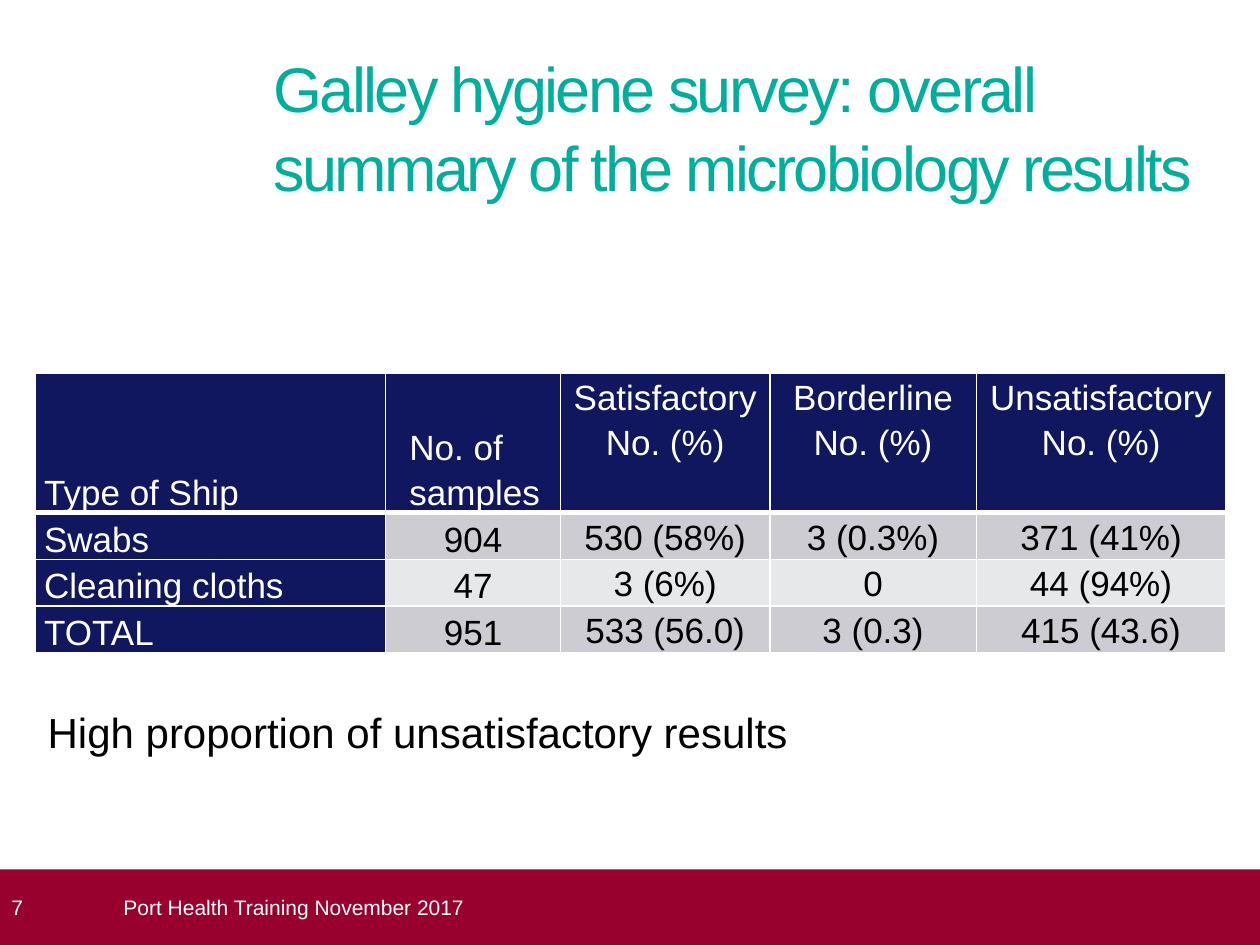
from dataclasses import dataclass

from lxml.etree import SubElement
from pptx import Presentation
from pptx.dml.color import RGBColor
from pptx.enum.shapes import MSO_SHAPE
from pptx.enum.text import MSO_ANCHOR, PP_ALIGN
from pptx.oxml.ns import qn
from pptx.util import Inches, Pt

TEAL = RGBColor(0x00, 0xAE, 0x9E)
NAVY = RGBColor(0x11, 0x17, 0x5E)
DARK = RGBColor(0xCC, 0xCC, 0xD2)
PALE = RGBColor(0xE7, 0xE8, 0xEA)
RED = RGBColor(0x98, 0x00, 0x2E)
WHITE = RGBColor(0xFF, 0xFF, 0xFF)
BLACK = RGBColor(0x00, 0x00, 0x00)

COLS = [2.78, 1.39, 1.66, 1.64, 1.98]
ROWS = [1.11, 0.37, 0.37, 0.37]
DATA = [
    ["Type of Ship", "No. of samples", "Satisfactory\nNo. (%)",
     "Borderline\nNo. (%)", "Unsatisfactory\nNo. (%)"],
    ["Swabs", "904", "530 (58%)", "3 (0.3%)", "371 (41%)"],
    ["Cleaning cloths", "47", "3 (6%)", "0", "44 (94%)"],
    ["TOTAL", "951", "533 (56.0)", "3 (0.3)", "415 (43.6)"],
]


@dataclass
class Label:
    text: str
    box: tuple
    size: int
    color: RGBColor
    inset: tuple
    anchor: MSO_ANCHOR


def place(shape, box: tuple) -> None:
    shape.left, shape.top, shape.width, shape.height = map(Inches, box)


def add_run(para, text: str, size: int, color: RGBColor):
    run = para.add_run()
    run.text = text
    run.font.name = "Arial"
    run.font.size = Pt(size)
    run.font.color.rgb = color
    return run


def set_inset(item, inset: tuple) -> None:
    (item.margin_left, item.margin_top,
     item.margin_right, item.margin_bottom) = map(Inches, inset)


def fill_label(shape, label: Label):
    place(shape, label.box)
    frame = shape.text_frame
    frame.word_wrap = True
    frame.vertical_anchor = label.anchor
    set_inset(frame, label.inset)
    para = frame.paragraphs[0]
    para.alignment = PP_ALIGN.LEFT
    return add_run(para, label.text, label.size, label.color)


def add_edges(cell, base: float) -> None:
    """White cell borders; they must come before the fill."""
    props = cell._tc.get_or_add_tcPr()
    for side, width in (("L", 1), ("R", 1), ("T", 1), ("B", base)):
        line = SubElement(props, qn(f"a:ln{side}"), w=str(Pt(width)))
        fill = SubElement(line, qn("a:solidFill"))
        SubElement(fill, qn("a:srgbClr"), val=str(WHITE))


def fill_cell(cell, row: int, col: int) -> None:
    head = row == 0 or col == 0
    add_edges(cell, 3 if row == 0 else 1)
    cell.fill.solid()
    cell.fill.fore_color.rgb = NAVY if head else (DARK if row % 2 else PALE)
    set_inset(cell, (0.07, 0, 0.07, 0))
    cell.vertical_anchor = MSO_ANCHOR.BOTTOM if col < 2 else MSO_ANCHOR.TOP
    left = col == 0 or (row == 0 and col == 1)
    for num, text in enumerate(DATA[row][col].split("\n")):
        frame = cell.text_frame
        para = frame.add_paragraph() if num else frame.paragraphs[0]
        para.alignment = PP_ALIGN.LEFT if left else PP_ALIGN.CENTER
        para.line_spacing = 1.15
        if row == 0 and col == 1:
            para._p.get_or_add_pPr().set("marL", str(Inches(0.12)))
        add_run(para, text, 20, WHITE if head else BLACK)


def add_grid(slide) -> None:
    grid = slide.shapes.add_table(
        len(ROWS), len(COLS), Inches(0.28), Inches(2.96),
        Inches(sum(COLS)), Inches(sum(ROWS))).table
    for col, width in enumerate(COLS):
        grid.columns[col].width = Inches(width)
    for row, height in enumerate(ROWS):
        grid.rows[row].height = Inches(height)
        for col in range(len(COLS)):
            fill_cell(grid.cell(row, col), row, col)


def main() -> None:
    deck = Presentation()
    deck.slide_width, deck.slide_height = Inches(10), Inches(7.5)
    slide = deck.slides.add_slide(deck.slide_layouts[5])
    shapes = slide.shapes

    # Title
    none = (0, 0, 0, 0)
    run = fill_label(shapes.title, Label(
        "Galley hygiene survey: overall summary of the microbiology results",
        (2.17, 0.36, 7.64, 1.34), 36, TEAL, none, MSO_ANCHOR.TOP))
    run._r.get_or_add_rPr().set("spc", "-150")
    shapes.title.text_frame.paragraphs[0].line_spacing = 1.05

    # Results table
    add_grid(slide)

    # Footer band with the slide number
    band = shapes.add_shape(MSO_SHAPE.RECTANGLE, 0, 0, 0, 0)
    band.shadow.inherit = False
    band.fill.solid()
    band.fill.fore_color.rgb = RED
    band.line.fill.background()
    fill_label(band, Label("7", (0, 6.9, 10, 0.6), 12, WHITE,
                           (0.09, 0, 0.1, 0), MSO_ANCHOR.MIDDLE))

    # Footer text and closing remark
    for label in (
        Label("Port Health Training November 2017", (0.98, 6.9, 8.82, 0.6),
              12, WHITE, none, MSO_ANCHOR.MIDDLE),
        Label("High proportion of unsatisfactory results",
              (0.28, 5.56, 8.74, 0.5), 24, BLACK,
              (0.1, 0.05, 0.1, 0.05), MSO_ANCHOR.TOP),
    ):
        fill_label(shapes.add_textbox(0, 0, 0, 0), label)

    deck.save("out.pptx")


if __name__ == "__main__":
    main()
